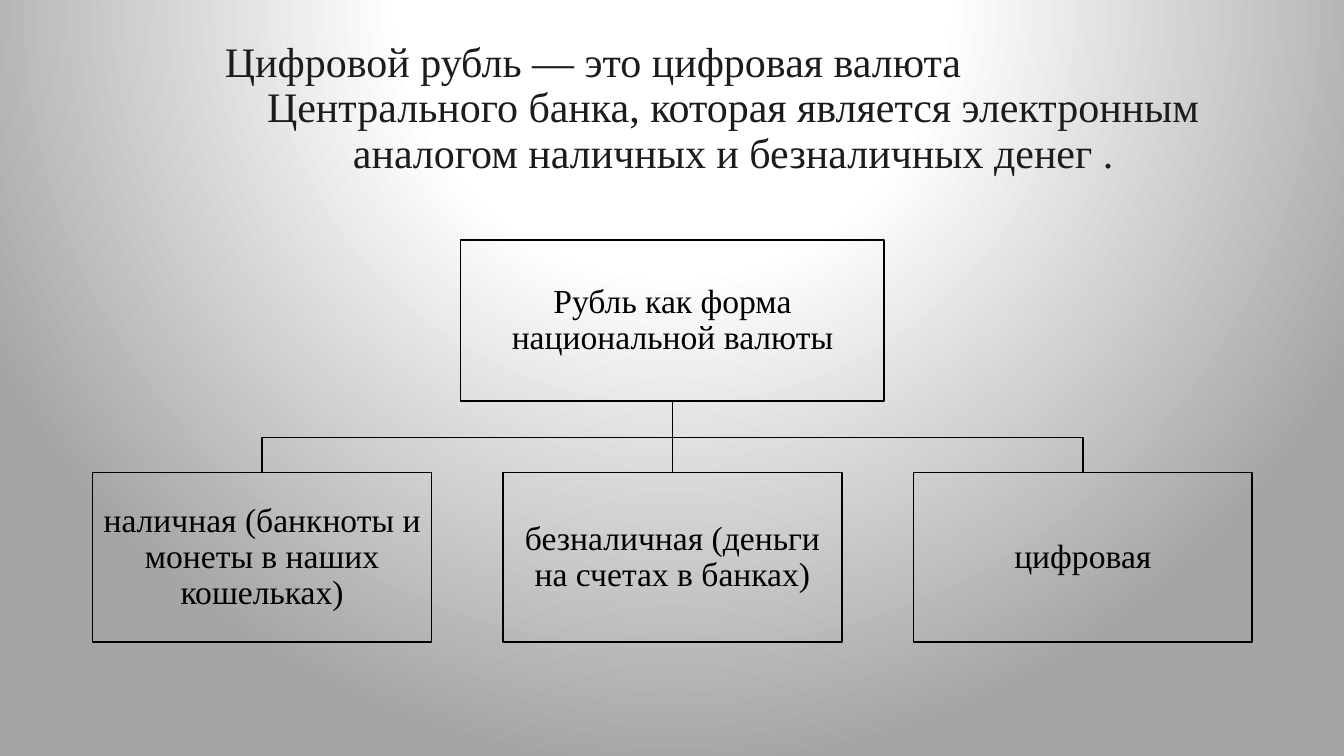
import pptx
import lxml.etree
import pptx.dml.color
import pptx.enum.shapes
import pptx.enum.text
import pptx.oxml
import pptx.oxml.ns
import pptx.util

Inches = pptx.util.Inches
Pt = pptx.util.Pt
Align = pptx.enum.text.PP_ALIGN
RGB = pptx.dml.color.RGBColor
BLACK = RGB(0, 0, 0)
DARK = RGB(0x1C, 0x1C, 0x1C)
WHITE = RGB(255, 255, 255)
GREY = RGB(0xA5, 0xA5, 0xA5)
qn = pptx.oxml.ns.qn

MID = 6.67
STEP = 4.07
ROOT_END = 3.98
BUS = 4.34
ROW = 4.69
FORMS = [
    "наличная (банкноты и монеты в наших кошельках)",
    "безналичная (деньги на счетах в банках)",
    "цифровая",
]


class Deck:
    font = "Times New Roman"

    def __init__(self):
        self.prs = pptx.Presentation()
        self.prs.slide_width = Inches(13.33)
        self.prs.slide_height = Inches(7.5)
        self.slide = self.prs.slides.add_slide(self.prs.slide_layouts[5])
        self.shapes = self.slide.shapes

    def glow(self, stops):
        """Fill the background with a circular gradient centred above the slide."""
        self.slide.background.fill.gradient()
        grad = next(self.slide.element.iter(qn("a:gradFill")))
        for child in list(grad):
            grad.remove(child)
        marks = lxml.etree.SubElement(grad, qn("a:gsLst"))
        for pos, color in stops:
            mark = lxml.etree.SubElement(marks, qn("a:gs"), pos=str(pos * 1000))
            lxml.etree.SubElement(mark, qn("a:srgbClr"), val=str(color))
        ring = lxml.etree.SubElement(grad, qn("a:path"), path="circle")
        lxml.etree.SubElement(ring, qn("a:fillToRect"),
                              l="50000", t="-80000", r="50000", b="180000")

    def style(self, para, size, color, align=Align.CENTER):
        para.alignment = align
        para.line_spacing = 0.9
        para.font.name = self.font
        para.font.size = Pt(size)
        para.font.color.rgb = color

    def title(self, first, rest, indent):
        """Set the title; its first line starts at the given indent."""
        head = self.shapes.title
        head.left, head.top = Inches(0.92), Inches(0.36)
        head.width, head.height = Inches(11.5), Inches(1.45)
        frame = head.text_frame
        frame.auto_size = pptx.enum.text.MSO_AUTO_SIZE.NONE
        frame.vertical_anchor = pptx.enum.text.MSO_ANCHOR.MIDDLE
        frame.text = first + "\n" + rest
        lead, tail = frame.paragraphs
        self.style(lead, 30, DARK, Align.LEFT)
        self.style(tail, 30, DARK)
        props = lead._p.get_or_add_pPr()
        props.set("marL", str(Inches(indent)))
        props.set("indent", "0")

    def stroke(self, shape):
        shape.line.color.rgb = BLACK
        shape.line.width = Pt(1)

    def box(self, mid, top, width, height, text):
        box = self.shapes.add_shape(
            pptx.enum.shapes.MSO_SHAPE.RECTANGLE, Inches(mid - width / 2),
            Inches(top), Inches(width), Inches(height))
        box.shadow.inherit = False
        box.fill.background()
        self.stroke(box)
        frame = box.text_frame
        frame.word_wrap = True
        frame.vertical_anchor = pptx.enum.text.MSO_ANCHOR.MIDDLE
        frame.margin_left = frame.margin_right = Inches(0.02)
        frame.margin_top = frame.margin_bottom = Inches(0.02)
        frame.text = text
        self.style(frame.paragraphs[0], 24, BLACK)

    def line(self, x, top, end):
        line = self.shapes.add_connector(
            pptx.enum.shapes.MSO_CONNECTOR.STRAIGHT,
            Inches(x), Inches(top), Inches(x), Inches(end))
        self.stroke(line)
        lxml.etree.SubElement(line._element.spPr, qn("a:effectLst"))

    def elbow(self, x, top, turn, to, end):
        """Draw a line down, sideways at height turn, and down again."""
        pen = self.shapes.build_freeform(Inches(x), Inches(top))
        points = [(x, turn), (to, turn), (to, end)]
        pen.add_line_segments([(Inches(a), Inches(b)) for a, b in points],
                              close=False)
        path = pen.convert_to_shape()
        path.shadow.inherit = False
        path.fill.background()
        self.stroke(path)


def main():
    deck = Deck()
    deck.glow([(0, WHITE), (35, WHITE), (100, GREY)])
    deck.title("Цифровой рубль — это цифровая валюта",
               "Центрального банка, которая является электронным аналогом "
               "наличных и безналичных денег .", 1.21)
    for side in (1, -1):
        deck.elbow(MID, ROOT_END, BUS, MID + side * STEP, ROW)
    deck.line(MID, ROOT_END, ROW)
    deck.box(MID, 2.38, 4.2, 1.6, "Рубль как форма национальной валюты")
    for i, text in enumerate(FORMS):
        deck.box(MID + (i - 1) * STEP, ROW, 3.36, 1.68, text)
    deck.prs.save("out.pptx")


if __name__ == "__main__":
    main()
